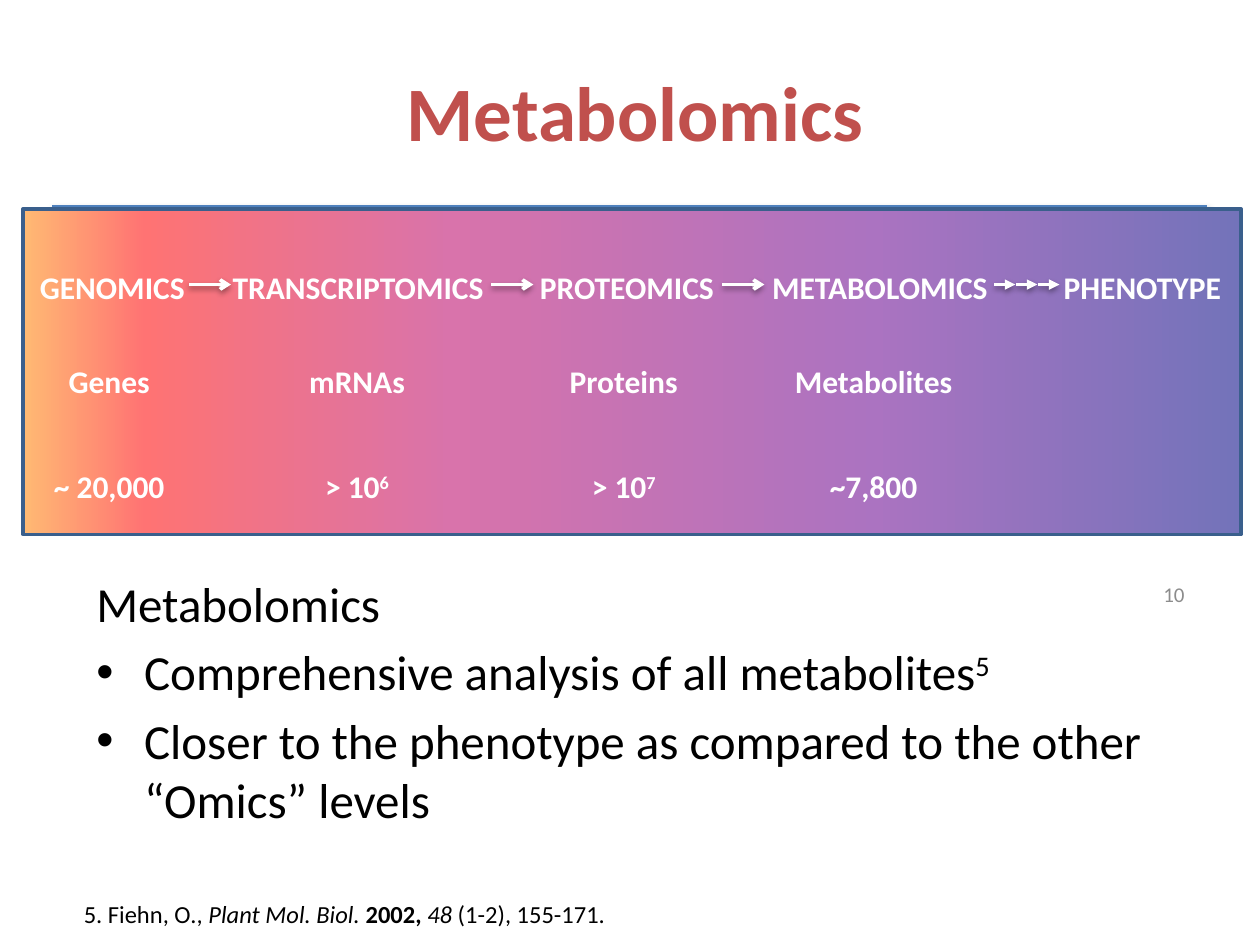
from lxml.etree import SubElement as Sub
from pptx import Presentation
from pptx.dml.color import RGBColor as Rgb
from pptx.enum.dml import MSO_THEME_COLOR
from pptx.enum.shapes import MSO_CONNECTOR as Conn, MSO_SHAPE as Form
from pptx.enum.text import MSO_ANCHOR as Anchor, MSO_AUTO_SIZE as Auto, PP_ALIGN as Align
from pptx.oxml.ns import qn
from pptx.util import Inches, Pt

COLS, ROWS = 120, 90
WIDTH, HEIGHT = Inches(10), Inches(7.5)
FONT = "Calibri"
WHITE = Rgb(255, 255, 255)
BLACK = Rgb(0, 0, 0)
RED = Rgb(0xC0, 0x50, 0x4D)
BLUE = Rgb(0x4F, 0x81, 0xBD)
NAVY = Rgb(0x3A, 0x5F, 0x8C)
GRAY = Rgb(0x8C, 0x8C, 0x8C)
STOPS = [
    (0, Rgb(0x00, 0x00, 0x82)),
    (30, Rgb(0x66, 0x00, 0x8F)),
    (65, Rgb(0xBA, 0x00, 0x66)),
    (90, Rgb(0xFF, 0x00, 0x00)),
    (100, Rgb(0xFF, 0x82, 0x00)),
]
HEADS = [("GENOMICS", 8.5, 18), ("TRANSCRIPTOMICS", 31.9, 28), ("PROTEOMICS", 57.5, 20),
         ("METABOLOMICS", 81.6, 24), ("PHENOTYPE", 106.6, 18)]
KINDS = [("Genes", 8.2, 12.4), ("mRNAs", 31.8, 12.4),
         ("Proteins", 57.2, 14.4), ("Metabolites", 81, 18)]
COUNTS = [("~ 20,000", "", 8.2, 14), ("> 10", "6", 31.8, 12.4),
          ("> 10", "7", 57.2, 12.4), ("~7,800", "", 81, 12.4)]


def grid(x, y, w, h):
    return [int(n) for n in (x * WIDTH / COLS, y * HEIGHT / ROWS,
                             w * WIDTH / COLS, h * HEIGHT / ROWS)]


def add_run(para, text, size, color, style=""):
    run = para.add_run()
    run.text = text
    font = run.font
    font.name, font.size = FONT, Pt(size)
    font.color.rgb = color
    font.bold, font.italic = "b" in style, "i" in style
    if "^" in style:
        font._element.set("baseline", "30000")


def add_text(shapes, box, runs, size, color, align=Align.LEFT,
             anchor=Anchor.TOP, grow=False):
    frame = shapes.add_textbox(*grid(*box)).text_frame
    frame.word_wrap = True
    frame.vertical_anchor = anchor
    frame.auto_size = Auto.SHAPE_TO_FIT_TEXT if grow else Auto.NONE
    para = frame.paragraphs[0]
    para.alignment = align
    for text, style in runs:
        add_run(para, text, size, color, style)
    return frame


def add_line(shapes, x, y, span, color, width, head=None):
    left, top, wide, _ = grid(x, y, span, 0)
    line = shapes.add_connector(Conn.STRAIGHT, left, top, left + wide, top)
    line.line.color.rgb = color
    line.line.width = Pt(width)
    if head:
        Sub(line.line._get_or_add_ln(), qn("a:tailEnd"), type=head)
    glow = Sub(Sub(line._element.spPr, qn("a:effectLst")), qn("a:outerShdw"),
               blurRad="40000", dist="22000", dir="5400000", rotWithShape="0")
    tint = Sub(glow, qn("a:srgbClr"), val=str(BLACK))
    Sub(tint, qn("a:alpha"), val="36000")


def add_title(shapes, box):
    add_text(shapes, box, [("Metabolomics", "b")], 44, RED, Align.CENTER, Anchor.MIDDLE)


def add_band(shapes, box):
    frame = shapes.add_table(1, 1, *grid(*box))
    table = frame.table
    table.first_row = table.horz_banding = False
    cell = table.cell(0, 0)
    fill = Sub(cell._tc.get_or_add_tcPr(), qn("a:gradFill"), rotWithShape="0")
    stops = Sub(fill, qn("a:gsLst"))
    for share, color in STOPS:
        stop = Sub(stops, qn("a:gs"), pos=str(share * 1000))
        Sub(stop, qn("a:srgbClr"), val=str(color))
    Sub(fill, qn("a:lin"), ang="10800000", scaled="0")


def add_chain(shapes, box):
    x, y, _, _ = box
    group = shapes.add_group_shape().shapes
    veil = group.add_shape(Form.RECTANGLE, *grid(*box))
    veil.shadow.inherit = False
    veil.fill.solid()
    veil.fill.fore_color.rgb = WHITE
    tint = veil._element.spPr.find(qn("a:solidFill")).find(qn("a:srgbClr"))
    Sub(tint, qn("a:alpha"), val="45000")
    veil.line.color.rgb = NAVY
    veil.line.width = Pt(2)

    def label(runs, mid, row, wide):
        add_text(group, (x + mid - wide / 2, y + row, wide, 4.8), runs,
                 18, WHITE, Align.CENTER, grow=True)

    for text, mid, wide in HEADS:
        label([(text, "b")], mid, 5, wide)
    for text, mid, wide in KINDS:
        label([(text, "b")], mid, 14, wide)
    for text, power, mid, wide in COUNTS:
        runs = [(text, "b")] + ([(power, "b^")] if power else [])
        label(runs, mid, 24, wide)
    for left in (15.8, 44.6, 66.6):
        add_line(group, x + left, y + 7.2, 4, WHITE, 2, "arrow")
    for step in range(3):
        add_line(group, x + 92.5 + 2.1 * step, y + 7.2, 2, WHITE, 2, "triangle")


def add_body(shapes, box):
    frame = add_text(shapes, box, [("Metabolomics", "")], 28, BLACK)
    points = [
        [("Comprehensive analysis of all metabolites", ""), ("5", "^")],
        [("Closer to the phenotype as compared to the other “Omics” levels", "")],
    ]
    for runs in points:
        para = frame.add_paragraph()
        para.space_before = Pt(5.6)
        props = para._p.get_or_add_pPr()
        props.set("marL", str(Inches(0.38)))
        props.set("indent", str(-Inches(0.38)))
        Sub(props, qn("a:buFont"), typeface="Arial")
        Sub(props, qn("a:buChar"), char="•")
        for text, style in runs:
            add_run(para, text, 28, BLACK, style)


def add_cite(shapes, box):
    runs = [("5. Fiehn, O., ", ""), ("Plant Mol. Biol. ", "i"), ("2002, ", "b"),
            ("48", "i"), (" (1-2), 155-171.", "")]
    add_text(shapes, box, runs, 14, BLACK, grow=True)


def main():
    deck = Presentation()
    deck.slide_width, deck.slide_height = WIDTH, HEIGHT
    slide = deck.slides.add_slide(deck.slide_layouts[6])
    shapes = slide.shapes
    add_line(shapes, 5, 19.8, 110, BLUE, 3)
    add_title(shapes, (17, 3, 87, 15))
    add_body(shapes, (8, 54, 108, 36))
    add_cite(shapes, (6.8, 85, 105, 4))
    add_text(shapes, (86, 54.2, 28, 4.8), [("10", "")], 12, GRAY,
             Align.RIGHT, Anchor.MIDDLE)
    add_band(shapes, (2.2, 19.8, 116, 31))
    add_chain(shapes, (2.2, 19.9, 116, 31))
    deck.save("out.pptx")


if __name__ == "__main__":
    main()
